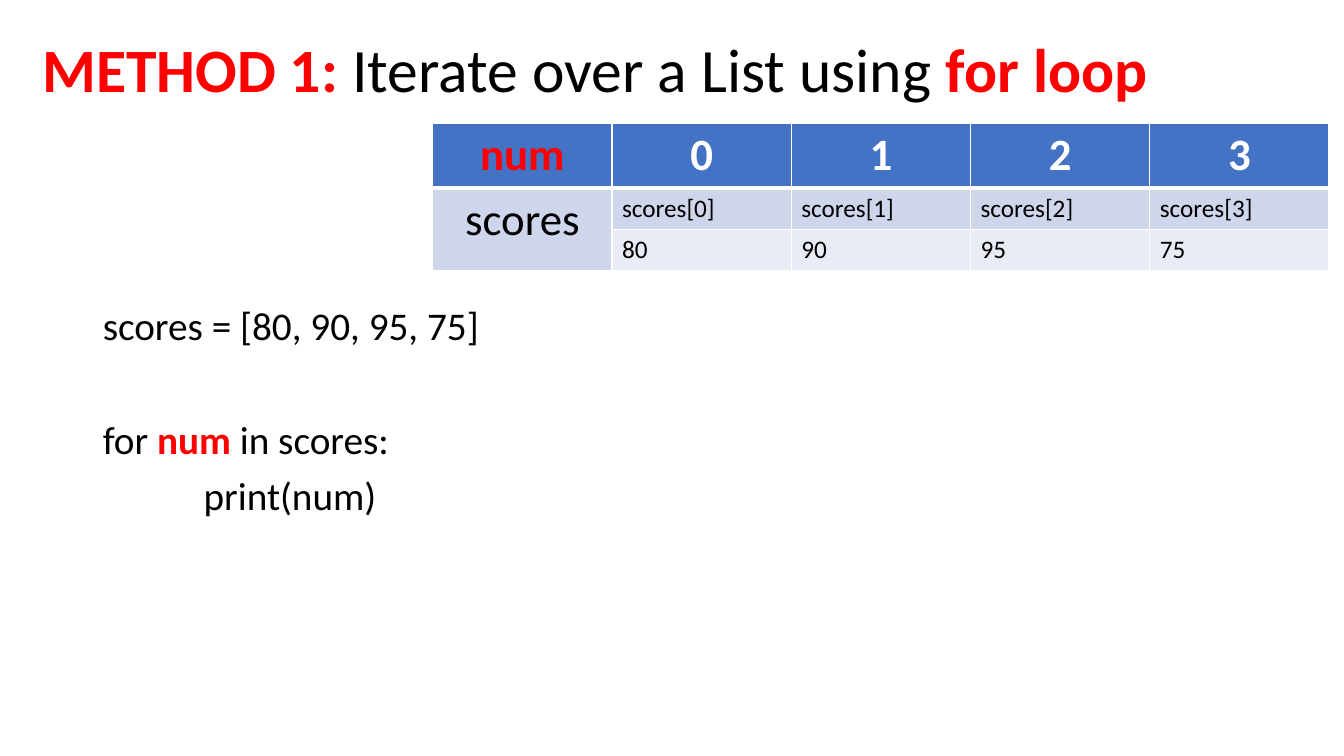
import pptx
import pptx.dml.color
import pptx.enum.text
import pptx.oxml
import pptx.oxml.ns
import pptx.util

WIDTH, HEIGHT = 13.33, 7.5
RED, BLACK, WHITE = "FF0000", "000000", "FFFFFF"
HEADER, BAND_DARK, BAND_LIGHT = "4472C4", "CFD5EA", "E9EBF5"
ALIGN = pptx.enum.text.PP_ALIGN
ANCHOR = pptx.enum.text.MSO_ANCHOR


def rgb(value):
    return pptx.dml.color.RGBColor.from_string(value)


def assign(target, values):
    for name, value in values.items():
        setattr(target, name, value)


class LessonSlide:
    """Slide in Calibri with a title, a code listing and a table."""

    def __init__(self, deck):
        self.font = "Calibri"
        self.slide = deck.slides.add_slide(deck.slide_layouts[1])

    def box(self, left, top, width, height):
        sides = (left * WIDTH, top * HEIGHT, width * WIDTH, height * HEIGHT)
        return dict(zip(("left", "top", "width", "height"), map(pptx.util.Inches, sides)))

    def add_runs(self, paragraph, runs, size, **layout):
        assign(paragraph, layout)
        for text, color, bold in runs:
            run = paragraph.add_run()
            run.text = text
            assign(run.font, {"name": self.font, "size": pptx.util.Pt(size), "bold": bold})
            run.font.color.rgb = rgb(color)

    def title(self, runs, share):
        heading = self.slide.shapes.title
        assign(heading, self.box(*share))
        assign(heading.text_frame, {"vertical_anchor": ANCHOR.MIDDLE, "word_wrap": True,
                                    "auto_size": pptx.enum.text.MSO_AUTO_SIZE.NONE})
        self.add_runs(heading.text_frame.paragraphs[0], runs, 44, alignment=ALIGN.LEFT, line_spacing=0.9)

    def code(self, lines, share):
        listing = self.slide.placeholders[1]
        assign(listing, self.box(*share))
        frame = listing.text_frame
        assign(frame, {"margin_top": pptx.util.Inches(0.61), "word_wrap": True,
                       "auto_size": pptx.enum.text.MSO_AUTO_SIZE.NONE})
        for number, (runs, before, indent) in enumerate(lines):
            paragraph = frame.add_paragraph() if number else frame.paragraphs[0]
            self.add_runs(paragraph, runs, 28, line_spacing=0.9, space_before=pptx.util.Pt(before))
            properties = paragraph._p.get_or_add_pPr()
            properties.set("marL", str(pptx.util.Inches(indent)))
            properties.set("indent", "0")
            properties.append(pptx.oxml.parse_xml(f"<a:buNone {pptx.oxml.ns.nsdecls('a')}/>"))

    def borders(self, cell, widths):
        properties = cell._tc.get_or_add_tcPr()
        for place, (side, width) in enumerate(zip("LRTB", widths)):
            properties.insert(place, pptx.oxml.parse_xml(
                f'<a:ln{side} {pptx.oxml.ns.nsdecls("a")} w="{pptx.util.Pt(width)}">'
                f'<a:solidFill><a:srgbClr val="{WHITE}"/></a:solidFill></a:ln{side}>'))

    def table(self, rows, heights, fills, share):
        frame = self.slide.shapes.add_table(len(rows), len(rows[0]), **self.box(*share))
        grid = frame.table
        assign(grid, {"first_row": False, "horz_banding": False})
        for row, height in zip(grid.rows, heights):
            row.height = pptx.util.Inches(height)
        for r, row in enumerate(rows):
            for c, text in enumerate(row):
                cell = grid.cell(r, c)
                cell.fill.solid()
                cell.fill.fore_color.rgb = rgb(fills[r])
                self.borders(cell, (1, 1, 3 if r == 1 else 1, 3 if r == 0 else 1))
                if text:
                    large = r == 0 or c == 0
                    color = BLACK if r else WHITE if c else RED
                    self.add_runs(cell.text_frame.paragraphs[0], [(text, color, r == 0)],
                                  32 if large else 18, alignment=ALIGN.CENTER if large else ALIGN.LEFT)
        grid.cell(1, 0).merge(grid.cell(2, 0))


def main():
    deck = pptx.Presentation()
    assign(deck, {"slide_width": pptx.util.Inches(WIDTH), "slide_height": pptx.util.Inches(HEIGHT)})
    scores = [80, 90, 95, 75]
    lesson = LessonSlide(deck)
    lesson.title([("METHOD 1:", RED, True), (" Iterate over a List using ", BLACK, False),
                  ("for loop", RED, True)], (0.024, 0, 0.863, 0.193))
    lesson.code([
        ([(f"scores = {scores}", BLACK, False)], 0, 0),
        ([("for ", BLACK, False), ("num ", RED, True), ("in scores:", BLACK, False)], 51, 0),
        ([("print(num)", BLACK, False)], 10, 1),
    ], (0.069, 0.324, 0.863, 0.576))
    lesson.table([
        ["num", *map(str, range(len(scores)))],
        ["scores", *(f"scores[{index}]" for index in range(len(scores)))],
        ["", *map(str, scores)],
    ], (0.63, 0.41, 0.41), (HEADER, BAND_DARK, BAND_LIGHT), (0.322, 0.163, 0.667, 0.192))
    deck.save("out.pptx")


if __name__ == "__main__":
    main()
